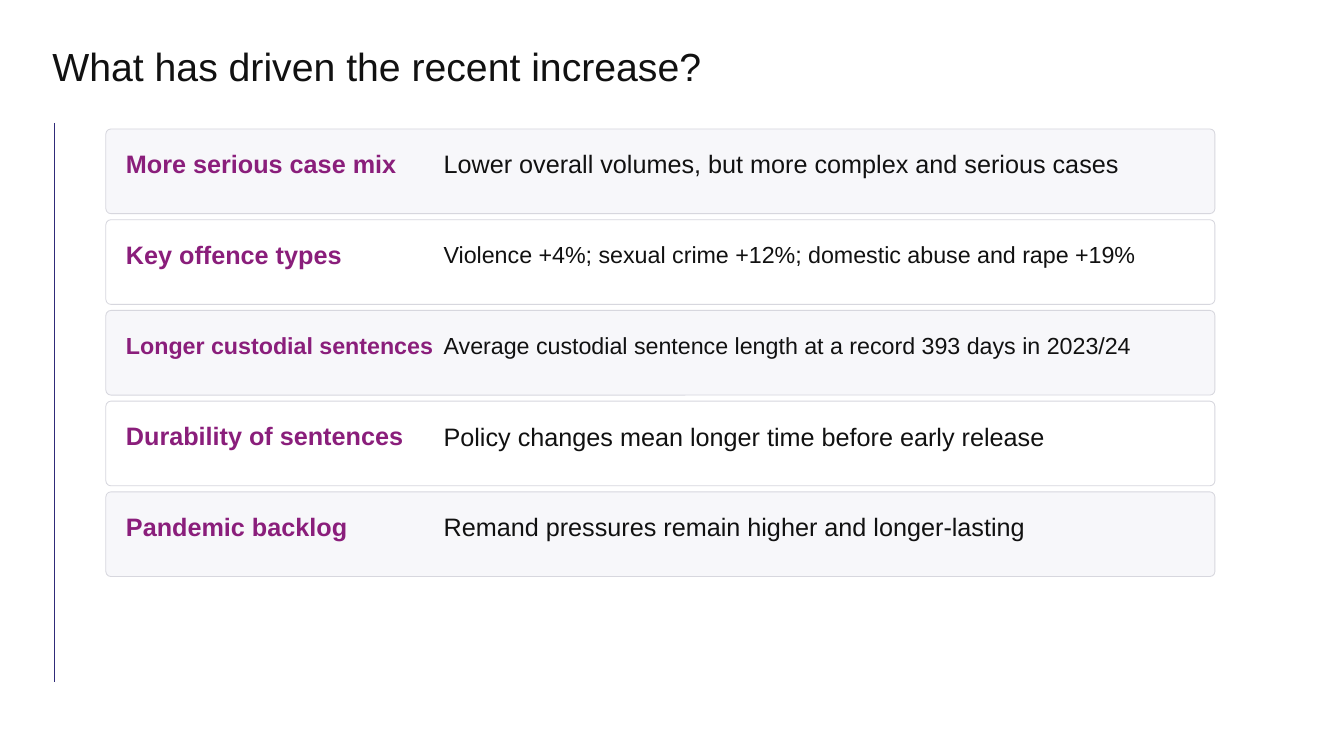
from pptx import Presentation
from pptx import util as u
from pptx.dml.color import RGBColor
from pptx.enum import shapes, text
from pptx.oxml.ns import qn
from lxml import etree

PX = u.Inches(1) // 100  # 100 px to the inch

INK = RGBColor(0x11, 0x11, 0x11)
PURPLE = RGBColor(0x8A, 0x1E, 0x7B)
NAVY = RGBColor(0x30, 0x2B, 0x79)
BORDER = RGBColor(0xD7, 0xD7, 0xDE)
PALE = RGBColor(0xF7, 0xF7, 0xFA)
WHITE = RGBColor(0xFF, 0xFF, 0xFF)

FONT = "Arial"
TITLE_SIZE, FULL, TIGHT = 28, 18, 16.6
ROW_HEIGHT, ROW_STEP = 84, 90

# Driver, its size, explanation, its size
DRIVERS = [
    ("More serious case mix", FULL,
     "Lower overall volumes, but more complex and serious cases", FULL),
    ("Key offence types", FULL,
     "Violence +4%; sexual crime +12%; domestic abuse and rape +19%", TIGHT),
    ("Longer custodial sentences", TIGHT,
     "Average custodial sentence length at a record 393 days in 2023/24", TIGHT),
    ("Durability of sentences", FULL,
     "Policy changes mean longer time before early release", FULL),
    ("Pandemic backlog", FULL,
     "Remand pressures remain higher and longer-lasting", FULL),
]


def px(*lengths):
    return [u.Emu(length * PX) for length in lengths]


def add_label(page, box, words, size, color, bold=False):
    frame = page.shapes.add_textbox(*px(*box)).text_frame
    frame.word_wrap = True
    frame.vertical_anchor = text.MSO_ANCHOR.MIDDLE
    frame.margin_left = frame.margin_right = 0
    frame.margin_top = frame.margin_bottom = 0
    span = frame.paragraphs[0].add_run()
    span.text = words
    span.font.name = FONT
    span.font.size = u.Pt(size)
    span.font.bold = bold
    span.font.color.rgb = color


def add_side_rule(page, box):
    left, top, _, height = box
    rule = page.shapes.add_connector(
        shapes.MSO_CONNECTOR.STRAIGHT, *px(left, top, left, top + height))
    rule.line.color.rgb = NAVY
    rule.line.width = u.Pt(1.2)
    etree.SubElement(rule._element.spPr, qn("a:effectLst"))


def add_driver_row(page, box, driver, fill):
    left, top, _, _ = box
    name, name_size, detail, detail_size = driver
    card = page.shapes.add_shape(
        shapes.MSO_SHAPE.ROUNDED_RECTANGLE, *px(*box))
    card.adjustments[0] = 0.06
    card.shadow.inherit = False
    card.fill.solid()
    card.fill.fore_color.rgb = fill
    card.line.color.rgb = BORDER
    card.line.width = u.Pt(0.6)
    add_label(page, (left + 20, top + 18, 320, 32), name, name_size, PURPLE, True)
    add_label(page, (left + 335, top + 17, 730, 35), detail, detail_size, INK)


def add_driver_list(page, box):
    left, top, width, _ = box
    for index, driver in enumerate(DRIVERS):
        row = (left, top + index * ROW_STEP, width, ROW_HEIGHT)
        add_driver_row(page, row, driver, WHITE if index % 2 else PALE)


def main():
    deck = Presentation()
    deck.slide_width, deck.slide_height = u.Inches(13.33), u.Inches(7.5)
    page = deck.slides.add_slide(deck.slide_layouts[6])

    # Title
    add_label(page, (52, 38, 1190, 55),
              "What has driven the recent increase?", TITLE_SIZE, INK)
    # Vertical rule at the left
    add_side_rule(page, (54, 122, 0, 555))
    # Five drivers
    add_driver_list(page, (105, 128, 1100, 444))

    deck.save("out.pptx")


if __name__ == "__main__":
    main()
